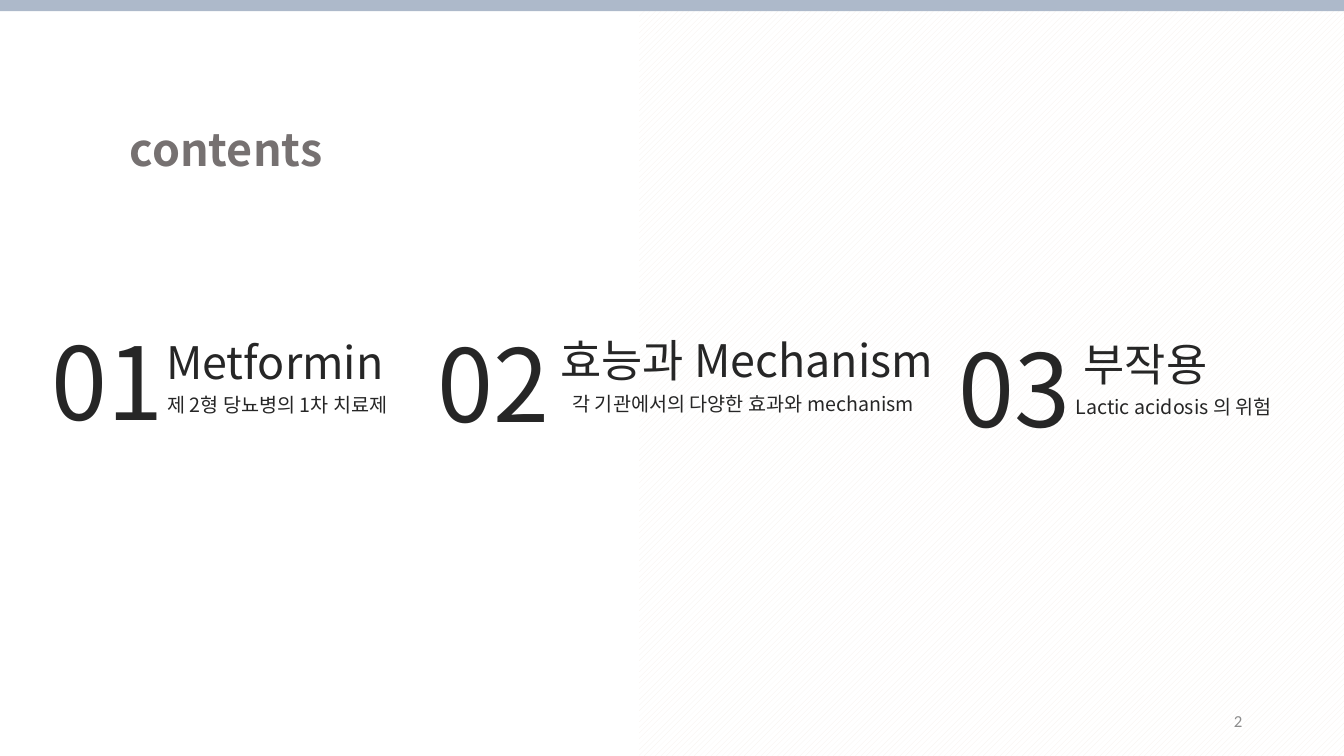
import pptx
import pptx.dml.color
import pptx.enum.dml
import pptx.enum.shapes
import pptx.enum.text
import pptx.oxml.ns
import pptx.util
from lxml import etree
from pptx.util import Inches

KOREAN_FONT = "Noto Sans CJK KR"
INK = "262626"


def color(hex_value):
    return pptx.dml.color.RGBColor.from_string(hex_value)


def add_text(page, place, text, size, hex_value=INK, face=KOREAN_FONT, bold=False):
    box = page.shapes.add_textbox(*map(Inches, place))
    box.text_frame.word_wrap = True
    para = box.text_frame.paragraphs[0]
    span = para.add_run()
    span.text = text
    formats = {"size": pptx.util.Pt(size), "name": face, "bold": bold}
    for name, value in formats.items():
        setattr(span.font, name, value)
    span.font.color.rgb = color(hex_value)
    # Hangul takes its typeface from the East Asian font
    east_asian = etree.SubElement(span.font._element, pptx.oxml.ns.qn("a:ea"))
    east_asian.set("typeface", face)
    return box


deck = pptx.Presentation()
deck.slide_width = Inches(13.33)
deck.slide_height = Inches(7.5)
page = deck.slides.add_slide(deck.slide_layouts[6])

# Hatched right half and top band
RECTANGLE = pptx.enum.shapes.MSO_SHAPE.RECTANGLE
hatching = page.shapes.add_shape(RECTANGLE, *map(Inches, (6.34, 0, 6.99, 7.5)))
hatching.fill.patterned()
hatching.fill.pattern = pptx.enum.dml.MSO_PATTERN.WIDE_UPWARD_DIAGONAL
hatching.fill.fore_color.rgb = color("F6EFEA")
hatching.fill.back_color.rgb = color("FFFFFF")

band = page.shapes.add_shape(RECTANGLE, *map(Inches, (0, 0, 13.33, 0.11)))
band.fill.solid()
band.fill.fore_color.rgb = color("ADB9CA")

for shape in (hatching, band):
    shape.line.fill.background()
    shape.shadow.inherit = False

# Title and page number
add_text(page, (1.19, 1.16, 6.1, 0.64), "contents", 32, "767171", bold=True)
number = add_text(page, (9.42, 6.95, 3, 0.4), "2", 12, "8C8C8C", "Calibri")
number.text_frame.vertical_anchor = pptx.enum.text.MSO_ANCHOR.MIDDLE
number.text_frame.paragraphs[0].alignment = pptx.enum.text.PP_ALIGN.RIGHT

# Chapters: each text with its left, top and width
chapters = [
    (("Metformin", 1.55, 3.27, 2.76),
     ("제 2형 당뇨병의 1차 치료제", 1.56, 3.85, 2.76),
     ("01", 0.41, 3.12, 1.46)),
    (("효능과 Mechanism", 5.46, 3.25, 4.45),
     ("각 기관에서의 다양한 효과와 mechanism", 5.58, 3.84, 4.35),
     ("02", 4.24, 3.14, 1.46)),
    (("부작용", 10.65, 3.29, 1.59),
     ("Lactic acidosis 의 위험", 10.57, 3.87, 2.76),
     ("03", 9.41, 3.19, 1.46)),
]
# Size and box height of heading, description and number
styles = [(32, 0.64), (14, 0.34), (72, 1.31)]
for chapter in chapters:
    for (text, left, top, width), (size, height) in zip(chapter, styles):
        add_text(page, (left, top, width, height), text, size)

deck.save("out.pptx")
